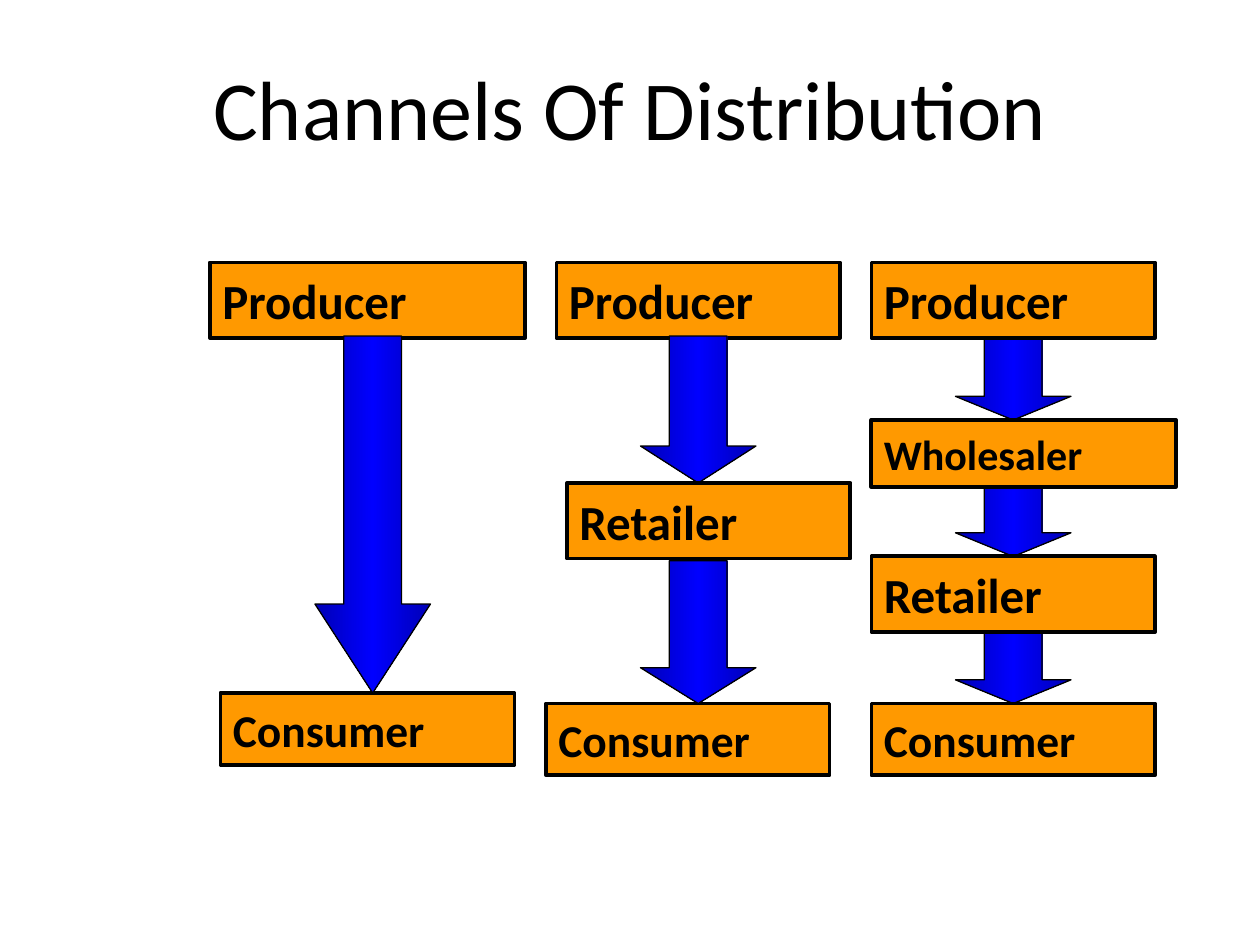
import copy
from dataclasses import dataclass

import pptx
import pptx.dml.color
import pptx.enum.shapes
import pptx.enum.text
import pptx.util

Pt = pptx.util.Pt


@dataclass(frozen=True)
class Theme:
    font: str = "Calibri"
    ink: str = "000000"
    box: str = "FF9900"
    arrow_edge: str = "0000B6"
    arrow_middle: str = "0000FF"
    title_size: float = 48
    large_size: float = 28
    consumer_size: float = 26
    wholesaler_size: float = 24
    box_line: float = 2.25
    arrow_line: float = 0.75


def rgb(value):
    return pptx.dml.color.RGBColor.from_string(value)


class ChannelSlide:
    ARROW_WIDTH = 66

    def __init__(self, slide, theme):
        self.slide = slide
        self.theme = theme
        self.roles = {
            "Producer": (theme.large_size, 43.2),
            "Retailer": (theme.large_size, 43.2),
            "Wholesaler": (theme.wholesaler_size, 38.2),
            "Consumer": (theme.consumer_size, 41),
        }

    def label(self, shape, text, size, alignment, bold=False):
        frame = shape.text_frame
        frame.word_wrap = True
        frame.vertical_anchor = pptx.enum.text.MSO_ANCHOR.MIDDLE
        frame.text = text
        paragraph = frame.paragraphs[0]
        paragraph.alignment = alignment
        font = paragraph.runs[0].font
        font.name = self.theme.font
        font.size = Pt(size)
        font.bold = bold
        font.color.rgb = rgb(self.theme.ink)
        return paragraph

    def shape(self, kind, left, top, width, height, line_width):
        shape = self.slide.shapes.add_shape(
            kind, Pt(left), Pt(top), Pt(width), Pt(height))
        shape.shadow.inherit = False
        shape.line.color.rgb = rgb(self.theme.ink)
        shape.line.width = Pt(line_width)
        return shape

    def title(self, text):
        box = self.slide.shapes.add_textbox(Pt(36), Pt(21.6), Pt(648), Pt(90))
        paragraph = self.label(
            box, text, self.theme.title_size, pptx.enum.text.PP_ALIGN.CENTER)
        paragraph.line_spacing = 0.8

    def box(self, role, left, top, width=162):
        size, height = self.roles[role]
        shape = self.shape(pptx.enum.shapes.MSO_SHAPE.RECTANGLE,
                           left, top, width, height, self.theme.box_line)
        shape.fill.solid()
        shape.fill.fore_color.rgb = rgb(self.theme.box)
        self.label(shape, role, size, pptx.enum.text.PP_ALIGN.LEFT, bold=True)

    def arrow(self, left, top, bottom, head=0.25):
        shape = self.shape(pptx.enum.shapes.MSO_SHAPE.DOWN_ARROW, left, top,
                           self.ARROW_WIDTH, bottom - top, self.theme.arrow_line)
        shape.adjustments[0] = 0.5
        shape.adjustments[1] = head
        shape.fill.gradient()
        shape.fill.gradient_angle = 0
        first_stop = shape.element.xpath(".//a:gsLst/a:gs")[0]
        first_stop.addnext(copy.deepcopy(first_stop))
        colors = (self.theme.arrow_edge, self.theme.arrow_middle, self.theme.arrow_edge)
        for index, (stop, color) in enumerate(zip(shape.fill.gradient_stops, colors)):
            stop.position = index / 2
            stop.color.rgb = rgb(color)


def main():
    presentation = pptx.Presentation()
    presentation.slide_width = Pt(720)
    presentation.slide_height = Pt(540)
    channels = ChannelSlide(
        presentation.slides.add_slide(presentation.slide_layouts[6]), Theme())

    for top in (186, 264, 348):
        channels.arrow(546, top, top + 54)

    channels.title("Channels Of Distribution")

    for left, width in ((120, 180), (318, 162), (498, 162)):
        channels.box("Producer", left, 150, width)
    for left, top, width in ((126, 396, 168), (312, 402, 162), (498, 402, 162)):
        channels.box("Consumer", left, top, width)

    channels.arrow(180, 192, 396, head=0.77)
    channels.arrow(366, 192, 276, head=0.32)
    channels.arrow(366, 320.4, 402, head=0.31)

    channels.box("Retailer", 324, 276)
    channels.box("Wholesaler", 498, 240, 174)
    channels.box("Retailer", 498, 318)

    presentation.save("out.pptx")


if __name__ == "__main__":
    main()
